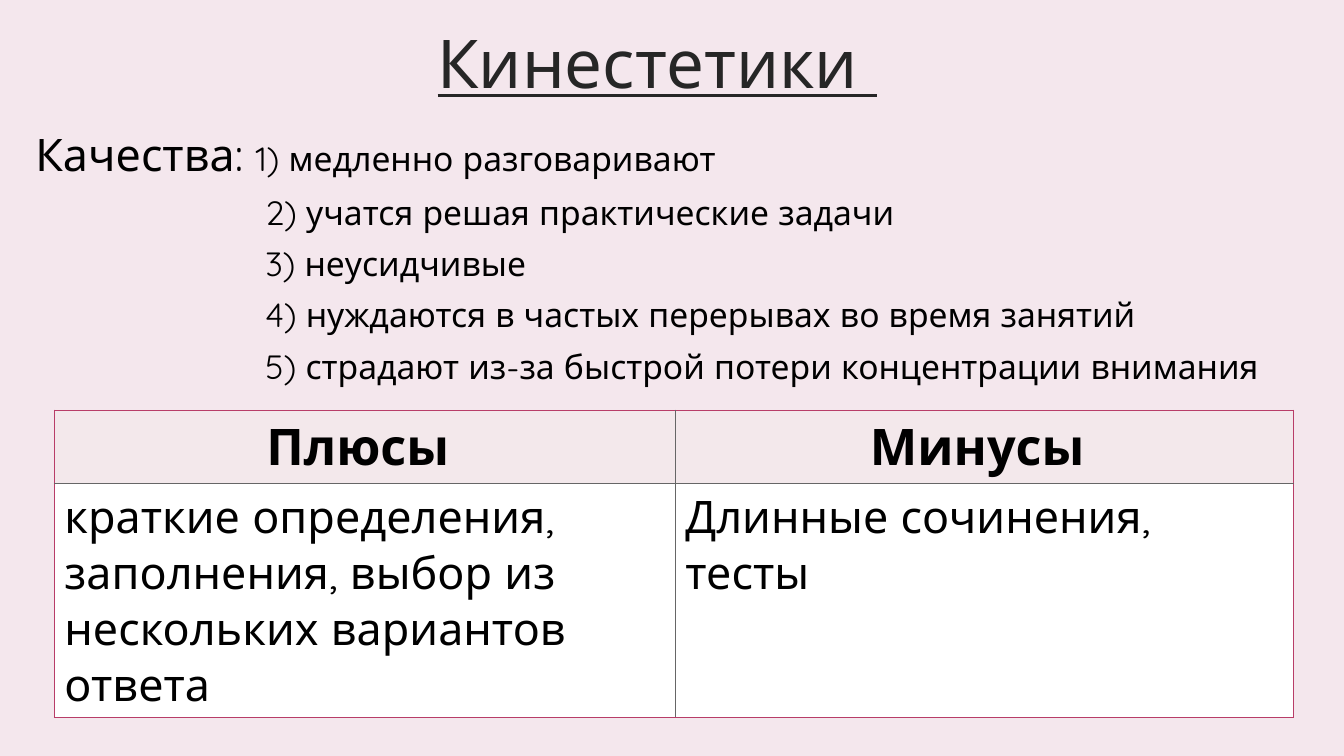
from pptx import Presentation
from pptx.dml.color import RGBColor as Rgb
from pptx.enum.text import MSO_ANCHOR as Anchor, PP_ALIGN as Align
from pptx.oxml import parse_xml
from pptx.oxml.ns import nsdecls
from pptx.util import Cm, Pt

HUES = {"back": "F4E7ED", "title": "262626", "text": "000000", "head": "F3E8EB",
        "cell": "FFFFFF", "edge": "B83D68", "inner": "666666"}
TRAITS = ["учатся решая практические задачи", "неусидчивые",
          "нуждаются в частых перерывах во время занятий",
          "страдают из-за быстрой потери концентрации внимания"]
ROWS = [["Плюсы ", "Минусы "],
        ["краткие определения, заполнения, выбор из нескольких вариантов ответа",
         "Длинные сочинения, тесты"]]


class Deck:
    font = "Quicksand"

    def __init__(self):
        self.prs = Presentation()
        self.prs.slide_width, self.prs.slide_height = Cm(33.87), Cm(19.05)
        self.slide = self.prs.slides.add_slide(self.prs.slide_layouts[6])
        fill = self.slide.background.fill
        fill.solid()
        fill.fore_color.rgb = Rgb.from_string(HUES["back"])

    def run(self, par, text, size, hue="text", **form):
        run = par.add_run()
        run.text = text
        for name, value in {"name": self.font, "size": Pt(size), **form}.items():
            setattr(run.font, name, value)
        run.font.color.rgb = Rgb.from_string(HUES[hue])

    def box(self, left, top, width, height, anchor=Anchor.TOP):
        area = [Cm(n) for n in (left, top, width, height)]
        frame = self.slide.shapes.add_textbox(*area).text_frame
        frame.word_wrap, frame.vertical_anchor = True, anchor
        return frame

    def title(self, text):
        par = self.box(2.59, 0.61, 27.94, 2.16, Anchor.MIDDLE).paragraphs[0]
        par.alignment, par.line_spacing = Align.CENTER, 0.9
        self.run(par, text, 48, "title", underline=True)

    def traits(self, label, first, rest):
        """Write the label with the first trait, then the rest indented below."""
        frame = self.box(0.64, 3.07, 32.33, 13.69)
        par = frame.paragraphs[0]
        self.run(par, label, 32)
        self.run(par, f"1) {first}", 24)
        for num, trait in enumerate(rest, 2):
            par = frame.add_paragraph()
            par.space_before = Pt(7.9)
            par._p.get_or_add_pPr().set("marL", str(Cm(5.8)))
            self.run(par, f"{num}) {trait}", 24)

    def border(self, cell, side, hue):
        cell._tc.get_or_add_tcPr().append(parse_xml(
            f'<a:{side} {nsdecls("a")} w="{Pt(1)}"><a:solidFill>'
            f'<a:srgbClr val="{HUES[hue]}"/></a:solidFill></a:{side}>'))

    def table(self, rows, wide, high):
        area = [Cm(n) for n in (1.37, 10.34, sum(wide), sum(high))]
        grid = self.slide.shapes.add_table(len(rows), len(wide), *area).table
        for col, width in zip(grid.columns, wide):
            col.width = Cm(width)
        for row, height in zip(grid.rows, high):
            row.height = Cm(height)
        for r, row in enumerate(rows):
            for c, text in enumerate(row):
                cell, head = grid.cell(r, c), r == 0
                outer = {"lnL": c == 0, "lnR": c == len(wide) - 1,
                         "lnT": head, "lnB": r == len(rows) - 1}
                for side, edge in outer.items():
                    self.border(cell, side, "edge" if edge else "inner")
                cell.fill.solid()
                cell.fill.fore_color.rgb = Rgb.from_string(HUES["head" if head else "cell"])
                par = cell.text_frame.paragraphs[0]
                par.alignment = Align.CENTER if head else Align.LEFT
                self.run(par, text, 36 if head else 32, bold=head)


def main():
    deck = Deck()
    deck.title("Кинестетики ")
    deck.traits("Качества: ", "медленно разговаривают", TRAITS)
    deck.table(ROWS, wide=[15.65, 15.57], high=[1.85, 5.9])
    deck.prs.save("out.pptx")


if __name__ == "__main__":
    main()
